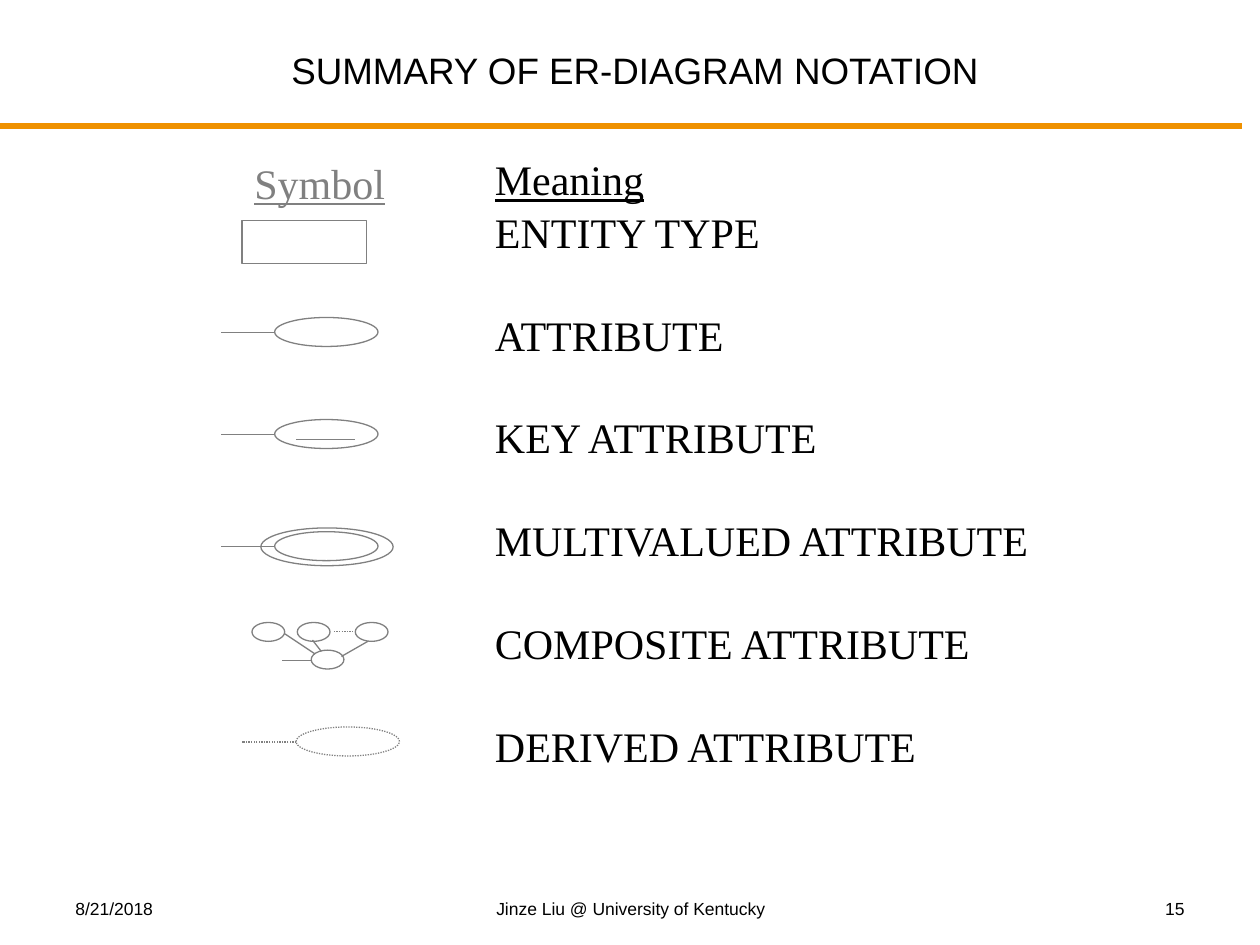
"""Build the slide that sums up ER-diagram notation."""
from dataclasses import dataclass

from lxml import etree
from pptx import Presentation
from pptx import util as u
from pptx.dml.color import RGBColor
from pptx.enum import dml, shapes, text
from pptx.oxml.ns import qn


@dataclass(frozen=True)
class Theme:
    ink: str = "000000"
    symbol: str = "808080"
    rule: str = "EF9100"
    sans: str = "Arial"
    serif: str = "Times New Roman"
    title_size: float = 21
    body_size: float = 24
    footer_size: float = 10
    thin: float = 0.75
    thick: float = 3


theme = Theme()
LEFT, CENTER, RIGHT = text.PP_ALIGN.LEFT, text.PP_ALIGN.CENTER, text.PP_ALIGN.RIGHT


def write(box, place, lines, font, size, color=theme.ink, align=LEFT, underlined=0, **frame_format):
    box.left, box.top, box.width, box.height = map(u.Inches, place)
    frame = box.text_frame
    settings = {"word_wrap": True, "auto_size": text.MSO_AUTO_SIZE.NONE,
                "vertical_anchor": text.MSO_ANCHOR.TOP, **frame_format}
    for name, value in settings.items():
        setattr(frame, name, value)
    frame.text = "\n".join(lines)
    for index, paragraph in enumerate(frame.paragraphs):
        paragraph.alignment = align
        face = paragraph.runs[0].font
        face.color.rgb = RGBColor.from_string(color)
        values = {"name": font, "size": u.Pt(size), "underline": index < underlined}
        for name, value in values.items():
            setattr(face, name, value)
    return frame


def draw(parent, kind, place, color=theme.symbol, width=theme.thin, dotted=False):
    lengths = map(u.Inches, place)
    if kind == "line":
        mark = parent.add_connector(shapes.MSO_CONNECTOR.STRAIGHT, *lengths)
        etree.SubElement(mark._element.spPr, qn("a:effectLst"))
    else:
        mark = parent.add_shape(kind, *lengths)
        mark.shadow.inherit = False
        mark.fill.background()
    mark.line.color.rgb = RGBColor.from_string(color)
    mark.line.width = u.Pt(width)
    if dotted:
        mark.line.dash_style = dml.MSO_LINE.ROUND_DOT


deck = Presentation()
deck.slide_width, deck.slide_height = u.Inches(10), u.Inches(7.5)
slide = deck.slides.add_slide(deck.slide_layouts[5])
canvas = slide.shapes

draw(canvas, "line", (0, 1, 9.86, 1), theme.rule, theme.thick)
write(canvas.title, (0.08, 0.38, 9.92, 0.4), ["SUMMARY OF ER-DIAGRAM NOTATION"],
      theme.sans, theme.title_size, align=CENTER, margin_top=0,
      vertical_anchor=text.MSO_ANCHOR.MIDDLE)

footers = [
    ("8/21/2018", 0.5, 2.33, LEFT),
    ("Jinze Liu @ University of Kentucky", 3.42, 3.17, CENTER),
    ("15", 7.17, 2.33, RIGHT),
]
for wording, left, width, align in footers:
    write(canvas.add_textbox(0, 0, 0, 0), (left, 7.08, width, 0.25), [wording],
          theme.sans, theme.footer_size, align=align)

meanings = ["Meaning", "ENTITY TYPE", "ATTRIBUTE", "KEY ATTRIBUTE",
            "MULTIVALUED ATTRIBUTE", "COMPOSITE ATTRIBUTE", "DERIVED ATTRIBUTE"]
meaning_frame = write(canvas.add_textbox(0, 0, 0, 0), (3.83, 1.17, 4.83, 4.89), meanings,
                      theme.serif, theme.body_size, underlined=1)
for index, paragraph in enumerate(meaning_frame.paragraphs):
    paragraph.space_before = u.Pt(1.2 if index < 2 else 30)
write(canvas.add_textbox(0, 0, 0, 0), (1.92, 1.25, 1.24, 0.4), ["Symbol"],
      theme.serif, theme.body_size, theme.symbol, underlined=1,
      word_wrap=False, margin_top=0, margin_bottom=0)

OVAL = shapes.MSO_SHAPE.OVAL
draw(canvas, shapes.MSO_SHAPE.RECTANGLE, (1.92, 1.75, 0.99, 0.34))

attributes = [
    (2.18, 2.52, False, []),
    (2.18, 3.33, False, [("line", (2.35, 3.49, 2.82, 3.49))]),
    (2.18, 4.22, False, [(OVAL, (2.07, 4.19, 1.05, 0.3))]),
    (2.35, 5.77, True, []),
]
for left, top, dotted, extras in attributes:
    symbol = canvas.add_group_shape().shapes
    middle = top + 0.12
    draw(symbol, OVAL, (left, top, 0.82, 0.23), dotted=dotted)
    draw(symbol, "line", (left, middle, left - 0.43, middle), dotted=dotted)
    for kind, place in extras:
        draw(symbol, kind, place)

composite = canvas.add_group_shape().shapes
for left, top in [(2, 4.94), (2.36, 4.94), (2.82, 4.94), (2.47, 5.16)]:
    draw(composite, OVAL, (left, top, 0.26, 0.15))
branches = [(2.48, 5.24, 2.24, 5.24), (2.26, 5.03, 2.5, 5.19),
            (2.48, 5.08, 2.55, 5.17), (2.71, 5.21, 2.92, 5.09)]
for ends in branches:
    draw(composite, "line", ends)
draw(composite, "line", (2.65, 5.01, 2.81, 5.01), dotted=True)

deck.save("out.pptx")
